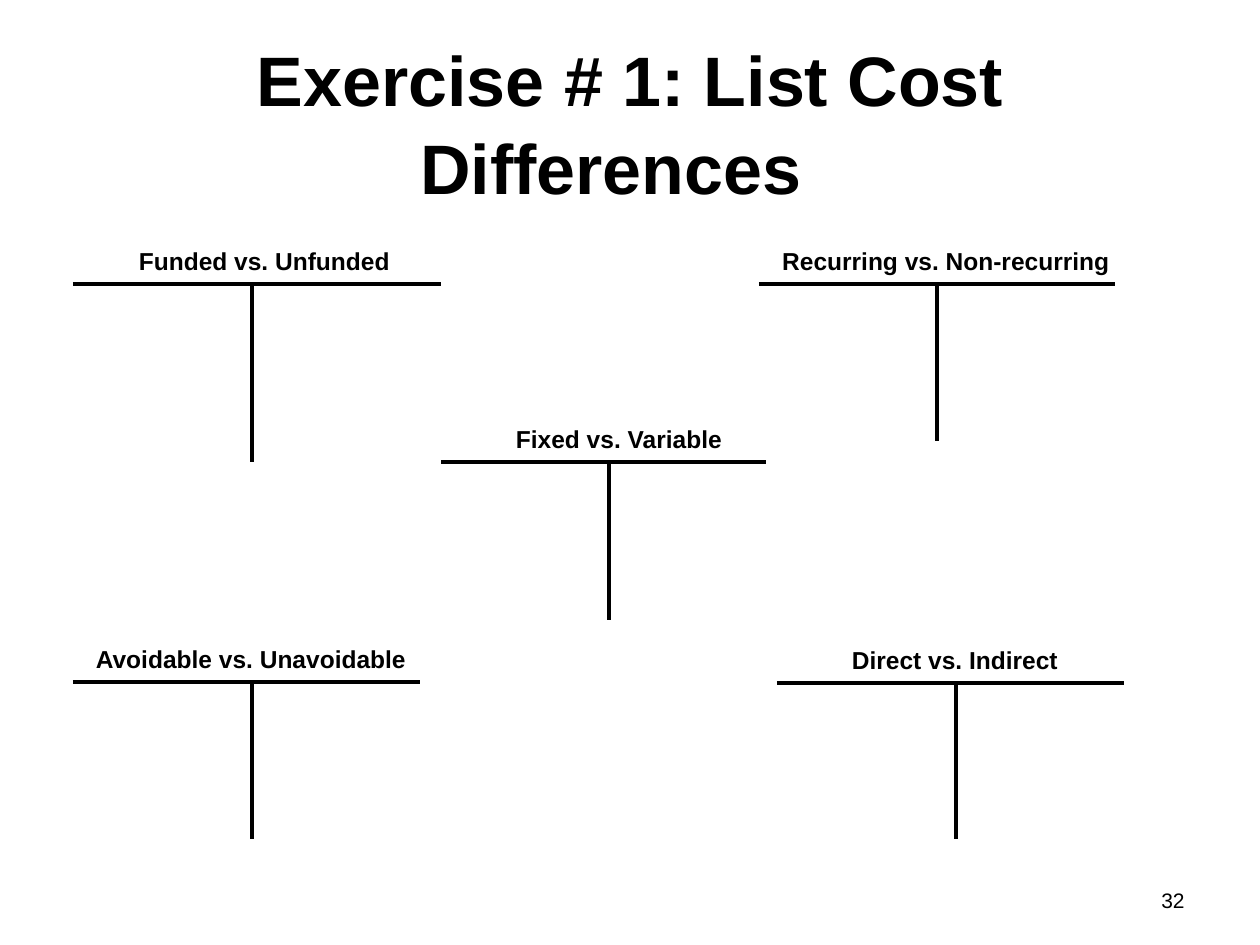
"""Build the cost differences exercise slide with five empty T-accounts."""
from lxml import etree
from pptx import Presentation
from pptx.dml.color import RGBColor
from pptx.enum.shapes import MSO_CONNECTOR
from pptx.enum.text import MSO_ANCHOR, PP_ALIGN
from pptx.oxml.ns import qn
from pptx.util import Pt

PX = 914400 / 126
BLACK = RGBColor(0, 0, 0)
STRAIGHT = MSO_CONNECTOR.STRAIGHT
TOP = MSO_ANCHOR.TOP
CENTER, RIGHT = PP_ALIGN.CENTER, PP_ALIGN.RIGHT
LABEL_RISE, LABEL_HEIGHT = 53, 52

TITLE = {"size": Pt(40), "bold": True}
LABEL = {"size": Pt(14), "bold": True}
NUMBER = {"size": Pt(12), "bold": False}


def add_text(shapes, box, text, font_format, alignment, spacing=1.0, wrap=True, inset=6):
    shape = shapes.add_textbox(*(round(value * PX) for value in box))
    frame = shape.text_frame
    frame.word_wrap = wrap
    frame.vertical_anchor = TOP
    frame.margin_top = frame.margin_bottom = round(inset * PX)
    paragraph = frame.paragraphs[0]
    paragraph.alignment = alignment
    paragraph.line_spacing = spacing
    run = paragraph.add_run()
    run.text = text
    run.font.name = "Arial"
    run.font.color.rgb = BLACK
    for name, value in font_format.items():
        setattr(run.font, name, value)


def add_line(shapes, *ends):
    line = shapes.add_connector(STRAIGHT, *(round(value * PX) for value in ends))
    line.line.color.rgb = BLACK
    line.line.width = Pt(1.75)
    etree.SubElement(line._element.spPr, qn("a:effectLst"))


presentation = Presentation()
presentation.slide_width = round(1260 * PX)
presentation.slide_height = round(945 * PX)
slide = presentation.slides.add_slide(presentation.slide_layouts[6])

add_text(slide.shapes, (903, 882, 294, 50), "32", NUMBER, RIGHT)
add_text(slide.shapes, (168, 32, 924, 111), "Exercise # 1: List Cost Differences  ",
         TITLE, CENTER, spacing=1.05, inset=0)

accounts = [
    ("Funded vs. Unfunded", 73, 441, 284, 252, 462, 126, 277),
    ("Recurring vs. Non-recurring", 759, 1115, 284, 937, 441, 769, 354),
    ("Fixed vs. Variable", 441, 766, 462, 609, 620, 503, 232),
    ("Avoidable vs. Unavoidable", 73, 420, 682, 252, 839, 83, 336),
    ("Direct vs. Indirect", 777, 1124, 683, 956, 839, 839, 232),
]
for label, left, right, bar, stem, bottom, label_left, label_width in accounts:
    account = slide.shapes.add_group_shape().shapes
    add_line(account, left, bar, right, bar)
    add_line(account, stem, bar, stem, bottom)
    add_text(account, (label_left, bar - LABEL_RISE, label_width, LABEL_HEIGHT),
             label, LABEL, CENTER, spacing=1.3, wrap=False)

presentation.save("out.pptx")
